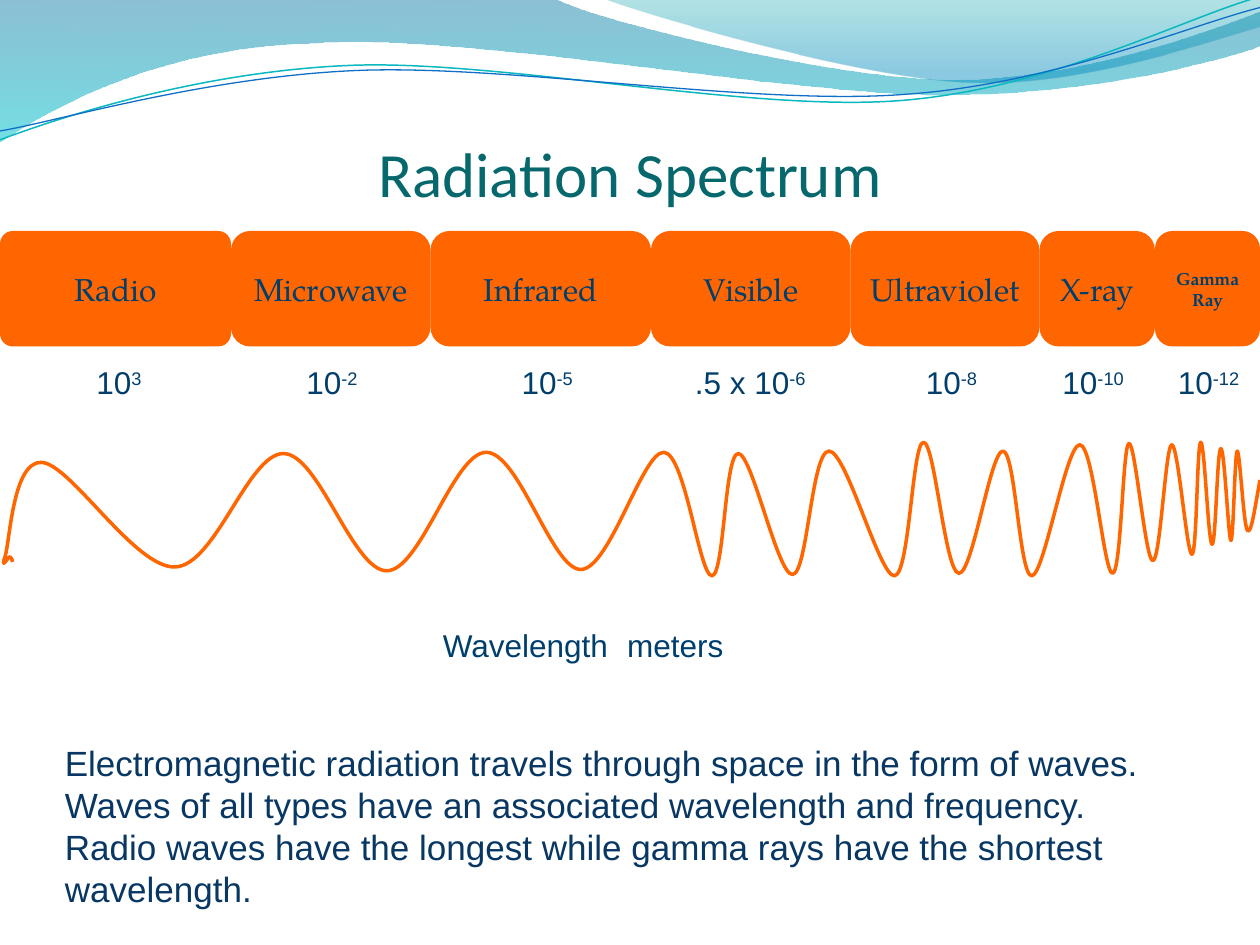
"""Build the radiation spectrum slide."""
from dataclasses import dataclass
from itertools import accumulate

from pptx import Presentation, util as u
from pptx.dml.color import RGBColor
from pptx.enum import shapes, text
from pptx.oxml import parse_xml
from pptx.oxml.ns import nsdecls, qn

COLORS = {
    "orange": "FF6600", "navy": "003E6C", "body": "083763", "title": "06686C",
    "white": "FFFFFF", "teal_line": "0AB8BF", "blue_line": "0F6FC6",
    "deep_blue": "0074A1", "aqua": "00C6CF", "teal": "00A1A9", "sky": "008BBF",
}


@dataclass
class Band:
    name: str
    width: float
    base: str
    power: str
    label_left: float
    label_width: float
    size: int = 18
    bold: bool = False
    corner: float = 0.167


@dataclass
class Stop:
    color: str
    position: float
    alpha: int


@dataclass
class Span:
    text: str
    color: str = "navy"
    raised: bool = False


BANDS = [
    Band("Radio", 22, "10", "3", 8, 7, corner=0.111),
    Band("Microwave", 19, "10", "-2", 28, 7.5),
    Band("Infrared", 21, "10", "-5", 48.5, 7.5),
    Band("Visible", 19, ".5 x 10", "-6", 65, 15),
    Band("Ultraviolet", 18, "10", "-8", 87, 7.5),
    Band("X-ray", 11, "10", "-10", 100, 9),
    Band("Gamma Ray", 10, "10", "-12", 111, 9, size=10, bold=True),
]

WAVE = [
    (1000, 381), (990, 421), (982, 358), (977, 429), (969, 356), (962, 432),
    (953, 351), (946, 440), (930, 353), (915, 445), (896, 352), (883, 455),
    (857, 353), (819, 457), (796, 358), (761, 455), (733, 351), (710, 457),
    (658, 358), (629, 456), (586, 360), (565, 457), (527, 359), (461, 452),
    (386, 359), (307, 453), (225, 360), (139, 450), (33, 367), (4, 442),
    (8, 442), (10, 446),
]
LEFT_SWOOSH = [
    (440, -1), (476, 17, 664, 63, 758, 63), (853, 63, 958, 26, 1000, 9),
    (1001, 36), (983, 44, 870, 76, 746, 75), (622, 75, 382, 28, 257, 34),
    (129, 36, 46, 83, -1, 113), (0, 0),
]
RIGHT_SWOOSH = [
    (509, 11, 682, 62, 769, 65), (856, 69, 961, 32, 1000, 21),
    (1000, 0), (479, -1),
]
TEAL_CURVE = [(48, 93, 158, 57, 277, 52), (395, 47, 593, 89, 713, 80),
              (833, 71, 938, 15, 998, -2)]
BLUE_CURVE = [(47, 96, 164, 61, 283, 56), (403, 51, 597, 84, 717, 75),
              (836, 67, 941, 21, 1000, 6)]


def rgb(name: str) -> RGBColor:
    return RGBColor.from_string(COLORS[name])


def grid(*steps: float) -> list:
    return [u.Cm(n * 2.54 / 12) for n in steps]


def smooth(points: list) -> list:
    """Return Catmull-Rom curve segments through the points."""
    segments = []
    last = len(points) - 1
    for i in range(last):
        a, b = points[i], points[i + 1]
        before, after = points[max(i - 1, 0)], points[min(i + 2, last)]
        c1 = [p + (q - o) / 6 for o, p, q in zip(before, a, b)]
        c2 = [q - (s - p) / 6 for p, q, s in zip(a, b, after)]
        if i == 0:
            c1 = [(p + q) / 2 for p, q in zip(a, c2)]
        if i == last - 1:
            c2 = [(p + q) / 2 for p, q in zip(c1, b)]
        segments.append((*c1, *c2, *b))
    return segments


def add_curve(s, start: tuple, segments: list, close: bool = False):
    """Draw line and cubic segments given in hundredths of an inch."""
    points = [seg[i:i + 2] for seg in segments for i in range(0, len(seg), 2)]
    builder = s.shapes.build_freeform(*start, scale=u.Cm(0.0254))
    builder.add_line_segments(points, close=close)
    sp = builder.convert_to_shape()
    sp.shadow.inherit = False
    steps = iter(list(sp._element.iter(qn("a:lnTo"))))
    for seg in segments:
        group = [next(steps) for _ in range(len(seg) // 2)]
        if len(group) == 3:
            cubic = parse_xml(f"<a:cubicBezTo {nsdecls('a')}/>")
            group[0].addprevious(cubic)
            for step in group:
                cubic.append(step[0])
                step.getparent().remove(step)
    return sp


def add_stroke(s, start: tuple, segments: list, color: str, width: float) -> None:
    sp = add_curve(s, start, segments)
    sp.fill.background()
    sp.line.color.rgb = rgb(color)
    sp.line.width = u.Pt(width)


def add_swoosh(s, start: tuple, segments: list, stops: list) -> None:
    sp = add_curve(s, start, segments, close=True)
    sp.line.fill.background()
    sp.fill.gradient()
    sp.fill.gradient_angle = 270
    for target, stop in zip(sp.fill.gradient_stops, stops):
        target.color.rgb = rgb(stop.color)
        target.position = stop.position
    for el, stop in zip(sp._element.spPr.iter(qn("a:srgbClr")), stops):
        el.append(parse_xml(f'<a:alpha {nsdecls("a")} val="{stop.alpha * 1000}"/>'))


def add_text(s, box: tuple, spans: list, size: int, font: str = "Arial"):
    tf = s.shapes.add_textbox(*grid(*box)).text_frame
    tf.word_wrap = True
    for span in spans:
        r = tf.paragraphs[0].add_run()
        r.text = span.text
        r.font.size = u.Pt(size)
        r.font.name = font
        r.font.color.rgb = rgb(span.color)
        if span.raised:
            r._r.get_or_add_rPr().set("baseline", "30000")
    return tf


def add_band(s, band: Band, left: float) -> None:
    sp = s.shapes.add_shape(shapes.MSO_SHAPE.ROUNDED_RECTANGLE,
                            *grid(left, 22, band.width, 11))
    sp.adjustments[0] = band.corner
    sp.shadow.inherit = False
    sp.fill.solid()
    sp.fill.fore_color.rgb = rgb("orange")
    sp.line.fill.background()
    tf = sp.text_frame
    tf.text = band.name
    tf.vertical_anchor = text.MSO_ANCHOR.MIDDLE
    p = tf.paragraphs[0]
    p.alignment = text.PP_ALIGN.CENTER
    f = p.runs[0].font
    f.name, f.size, f.bold = "TeX Gyre Pagella", u.Pt(band.size), band.bold
    f.color.rgb = rgb("navy")


def main() -> None:
    prs = Presentation()
    prs.slide_width, prs.slide_height = u.Cm(25.4), u.Cm(19.05)
    s = prs.slides.add_slide(prs.slide_layouts[6])

    add_swoosh(s, (0, 0), LEFT_SWOOSH, [Stop("deep_blue", 0, 45), Stop("aqua", 1, 55)])
    add_swoosh(s, (479, -1), RIGHT_SWOOSH, [Stop("teal", 0, 30), Stop("sky", 0.8, 45)])
    add_stroke(s, (0, 111), TEAL_CURVE, "teal_line", 0.85)
    add_stroke(s, (0, 104), BLUE_CURVE, "blue_line", 0.75)

    tf = add_text(s, (0, 12, 120, 8), [Span("Radiation Spectrum", "title")], 36, "Calibri")
    tf.margin_left = tf.margin_right = tf.margin_bottom = 0
    tf.vertical_anchor = text.MSO_ANCHOR.BOTTOM
    tf.paragraphs[0].alignment = text.PP_ALIGN.CENTER

    lefts = accumulate((band.width for band in BANDS), initial=0)
    for band, left in zip(BANDS, lefts):
        add_band(s, band, left)
        add_text(s, (band.label_left, 34, band.label_width, 8.5),
                 [Span(band.base), Span(band.power, raised=True)], 18)

    add_stroke(s, WAVE[0], smooth(WAVE), "orange", 2)
    add_text(s, (41, 59, 31, 4.8), [Span("Wavelength "), Span("(", "white"),
                                    Span("meters"), Span(")", "white")], 18)
    add_text(s, (5, 70, 109, 17.4), [Span(
        "Electromagnetic radiation travels through space in the form of waves. "
        "Waves of all types have an associated wavelength and frequency. "
        "Radio waves have the longest while gamma rays have the shortest "
        "wavelength.", "body")], 20)
    prs.save("out.pptx")


if __name__ == "__main__":
    main()
